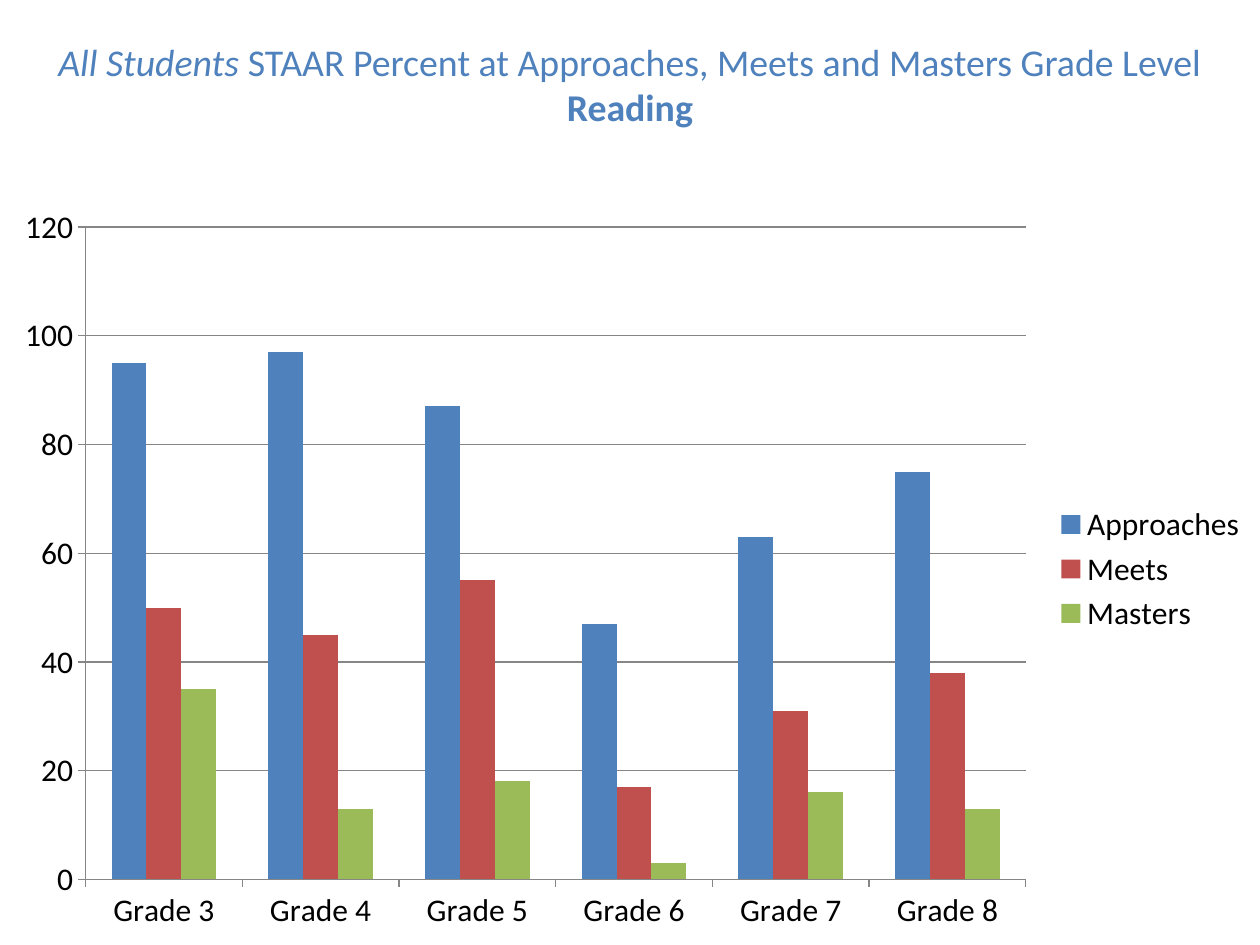
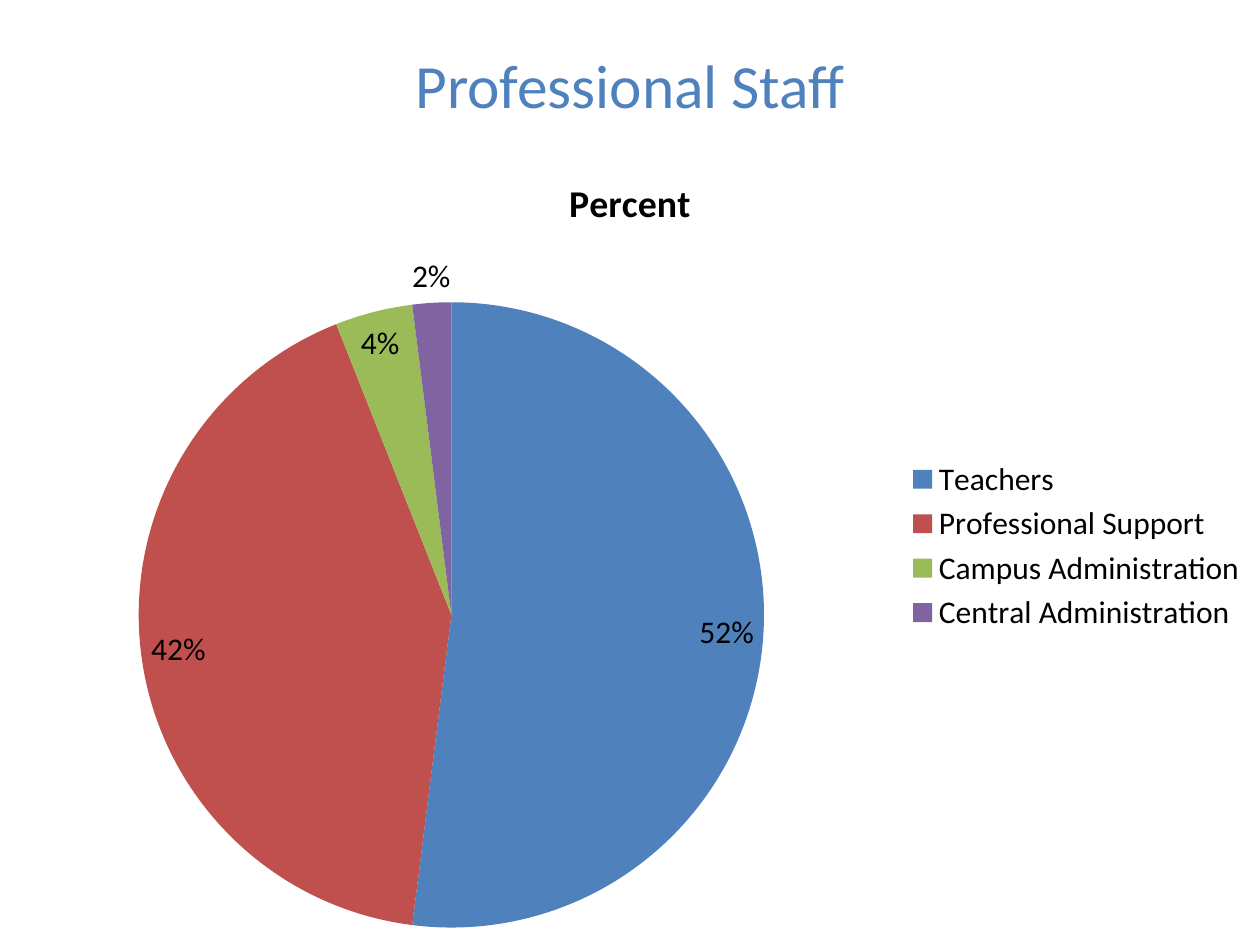
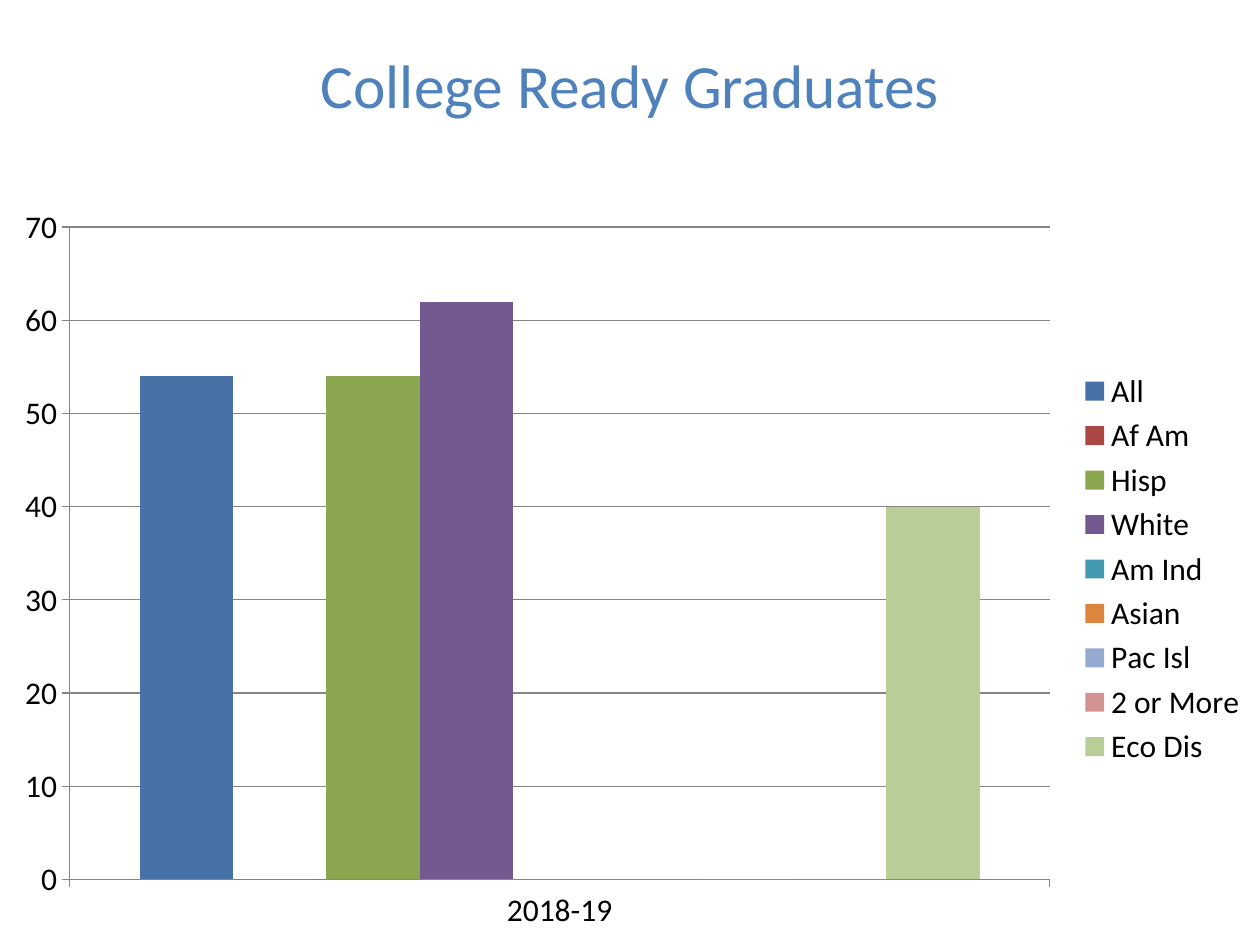
"""Build three school report slides: reading results, staff and graduates."""
from pptx import Presentation
from pptx.chart.data import CategoryChartData
from pptx.dml.color import RGBColor
from pptx.enum.chart import XL_CHART_TYPE, XL_LABEL_POSITION, XL_LEGEND_POSITION, XL_TICK_MARK
from pptx.enum.text import MSO_ANCHOR, PP_ALIGN
from pptx.util import Pt

COLUMNS = XL_CHART_TYPE.COLUMN_CLUSTERED
PIE = XL_CHART_TYPE.PIE
BEST_FIT = XL_LABEL_POSITION.BEST_FIT
RIGHT = XL_LEGEND_POSITION.RIGHT
TICK_OUT = XL_TICK_MARK.OUTSIDE
MIDDLE = MSO_ANCHOR.MIDDLE
CENTER = PP_ALIGN.CENTER

PX = 914400 / 126
WIDTH, HEIGHT = 1260, 945
TITLE_TOP, TITLE_HEIGHT = 21, 126
FONT = "Calibri"
BLACK = RGBColor(0x00, 0x00, 0x00)
GRAY = RGBColor(0x86, 0x86, 0x86)
BLUE = RGBColor(0x4F, 0x81, 0xBD)
RED = RGBColor(0xC0, 0x50, 0x4D)
GREEN = RGBColor(0x9B, 0xBB, 0x59)
PURPLE = RGBColor(0x80, 0x64, 0xA2)
ACCENTS = [BLUE, RED, GREEN, PURPLE]
GROUP_COLORS = [
    RGBColor(0x46, 0x72, 0xA8), RGBColor(0xAB, 0x47, 0x44), RGBColor(0x8A, 0xA6, 0x4F),
    RGBColor(0x72, 0x59, 0x90), RGBColor(0x42, 0x99, 0xB0), RGBColor(0xDC, 0x85, 0x3E),
    RGBColor(0x93, 0xA9, 0xCF), RGBColor(0xD1, 0x93, 0x92), RGBColor(0xB9, 0xCD, 0x96),
]


def px(length):
    """Turn pixels into EMU."""
    return round(length * PX)


def write(paragraph, text, size=35.1, color=BLUE, bold=False, italic=False):
    """Add a formatted run to a centred paragraph."""
    paragraph.alignment = CENTER
    run = paragraph.add_run()
    run.text = text
    run.font.name = FONT
    run.font.size = Pt(size)
    run.font.color.rgb = color
    run.font.bold = bold
    run.font.italic = italic


reading_title = [
    [("All Students ", {"size": 21.6, "italic": True}),
     ("STAAR Percent at Approaches, Meets and Masters Grade Level", {"size": 21.6})],
    [("Reading", {"size": 21.6, "bold": True})],
]
reports = [
    {
        "title": reading_title, "kind": COLUMNS, "top": 193, "scale": (120, 20),
        "categories": [f"Grade {grade}" for grade in range(3, 9)],
        "series": {
            "Approaches": [95, 97, 87, 47, 63, 75],
            "Meets": [50, 45, 55, 17, 31, 38],
            "Masters": [35, 13, 18, 3, 16, 13],
        },
        "colors": ACCENTS,
    },
    {
        "title": [[("Professional Staff", {})]], "kind": PIE, "top": 147,
        "categories": ["Teachers", "Professional Support",
                       "Campus Administration", "Central Administration"],
        "series": {"Percent": [52, 42, 4, 2]},
        "colors": ACCENTS,
    },
    {
        "title": [[("College Ready Graduates", {})]], "kind": COLUMNS, "top": 193,
        "scale": (70, 10),
        "categories": ["2018-19"],
        "series": {"All": [54], "Af Am": [0], "Hisp": [54], "White": [62], "Am Ind": [0],
                   "Asian": [0], "Pac Isl": [0], "2 or More": [0], "Eco Dis": [40]},
        "colors": GROUP_COLORS,
    },
]

deck = Presentation()
deck.slide_width, deck.slide_height = px(WIDTH), px(HEIGHT)
title_only = deck.slide_layouts[5]

for report in reports:
    slide = deck.slides.add_slide(title_only)
    title = slide.shapes.title
    title.left, title.top = px(0), px(TITLE_TOP)
    title.width, title.height = px(WIDTH), px(TITLE_HEIGHT)
    title.text_frame.vertical_anchor = MIDDLE
    for index, line in enumerate(report["title"]):
        paragraph = title.text_frame.add_paragraph() if index else title.text_frame.paragraphs[0]
        for text, style in line:
            write(paragraph, text, **style)

    data = CategoryChartData()
    data.categories = report["categories"]
    for name, values in report["series"].items():
        data.add_series(name, values)
    top = report["top"]
    chart = slide.shapes.add_chart(
        report["kind"], px(0), px(top), px(WIDTH), px(HEIGHT - top), data).chart
    chart.font.name = FONT
    chart.font.size = Pt(18)
    chart.font.color.rgb = BLACK
    chart.has_legend = True
    chart.legend.position = RIGHT
    chart.legend.include_in_layout = False
    plot = chart.plots[0]

    if report["kind"] == PIE:
        chart.has_title = True
        write(chart.chart_title.text_frame.paragraphs[0], "Percent",
              size=21.6, color=BLACK, bold=True)
        chart.chart_title.include_in_layout = False
        plot.vary_by_categories = True
        plot.has_data_labels = True
        labels = plot.data_labels
        labels.show_percentage = True
        labels.show_value = False
        labels.number_format = "0%"
        labels.number_format_is_linked = False
        labels.position = BEST_FIT
        slices = plot.series[0].points
        colored_parts = [slices[i] for i in range(len(report["categories"]))]
    else:
        chart.has_title = False
        plot.vary_by_categories = False
        plot.gap_width = 150
        plot.overlap = 0
        for axis in (chart.category_axis, chart.value_axis):
            axis.major_tick_mark = TICK_OUT
            axis.format.line.color.rgb = GRAY
            axis.format.line.width = Pt(0.75)
        percent_axis = chart.value_axis
        percent_axis.minimum_scale = 0
        percent_axis.maximum_scale, percent_axis.major_unit = report["scale"]
        percent_axis.major_gridlines.format.line.color.rgb = GRAY
        percent_axis.major_gridlines.format.line.width = Pt(0.75)
        colored_parts = plot.series

    for part, color in zip(colored_parts, report["colors"]):
        part.format.fill.solid()
        part.format.fill.fore_color.rgb = color

deck.save("out.pptx")
